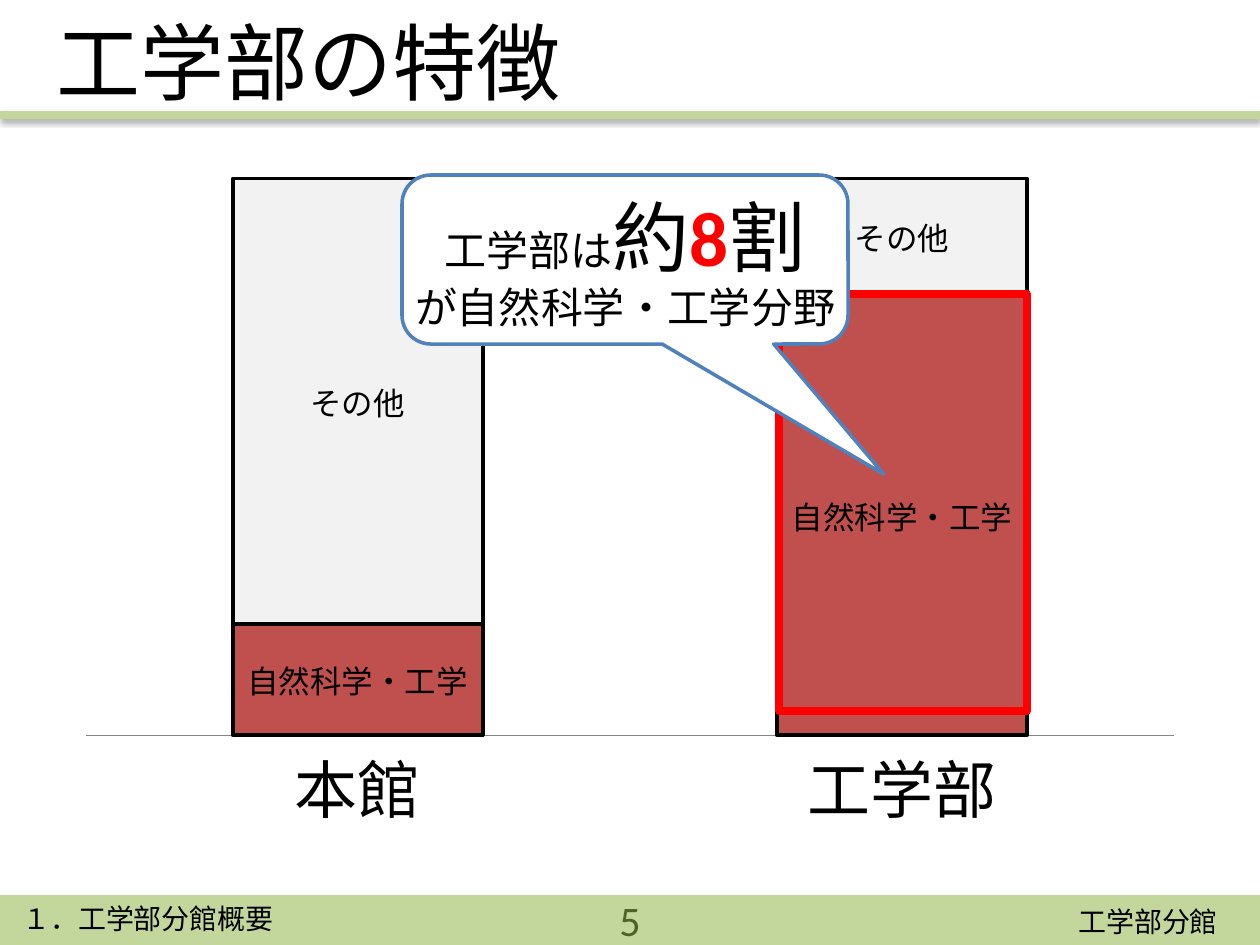
from lxml import etree
from pptx import Presentation
from pptx.chart.data import CategoryChartData
from pptx.dml.color import RGBColor
from pptx.enum.chart import XL_CHART_TYPE, XL_LABEL_POSITION, XL_TICK_LABEL_POSITION, XL_TICK_MARK
from pptx.enum.shapes import MSO_CONNECTOR, MSO_SHAPE
from pptx.enum.text import MSO_ANCHOR, PP_ALIGN
from pptx.oxml import parse_xml
from pptx.oxml.ns import nsdecls, qn
from pptx.util import Emu, Pt

STACKED = XL_CHART_TYPE.COLUMN_STACKED_100
CENTER_LABEL = XL_LABEL_POSITION.CENTER
NO_LABELS = XL_TICK_LABEL_POSITION.NONE
NO_TICKS = XL_TICK_MARK.NONE
STRAIGHT = MSO_CONNECTOR.STRAIGHT
RECT, CALLOUT = MSO_SHAPE.RECTANGLE, MSO_SHAPE.ROUNDED_RECTANGULAR_CALLOUT
TOP, MIDDLE = MSO_ANCHOR.TOP, MSO_ANCHOR.MIDDLE
LEFT, CENTER = PP_ALIGN.LEFT, PP_ALIGN.CENTER

FONT = "Calibri"
BLACK, WHITE, RED = "000000", "FFFFFF", "FF0000"
GREEN, DARK_GREEN, BLUE = "C3D69B", "4F6228", "4F81BD"
BRICK, PALE, GRAY = "C0504D", "F2F2F2", "868686"


def px(n):
    return Emu(round(n * 914400 / 126))


def rgb(color):
    return RGBColor.from_string(color)


def set_line(line, color, width):
    line.color.rgb = rgb(color)
    line.width = Pt(width)


def set_font(font, size, color=BLACK, bold=False):
    font.name = FONT
    font.size = Pt(size)
    font.color.rgb = rgb(color)
    font.bold = bold


def add_rule(s, y, width):
    """Full-width green line with a soft shadow below it."""
    rule = s.shapes.add_connector(STRAIGHT, 0, px(y), px(1260), px(y))
    set_line(rule.line, GREEN, width)
    rule._element.spPr.append(parse_xml(
        f'<a:effectLst {nsdecls("a")}><a:outerShdw blurRad="39370" dist="22860" dir="5400000">'
        '<a:srgbClr val="000000"><a:alpha val="35000"/></a:srgbClr>'
        '</a:outerShdw></a:effectLst>'))


def add_text(s, box, text, size, color=BLACK, align=LEFT, anchor=TOP, wrap=True):
    tf = s.shapes.add_textbox(*map(px, box)).text_frame
    tf.word_wrap = wrap
    tf.vertical_anchor = anchor
    tf.text = text
    p = tf.paragraphs[0]
    p.alignment = align
    set_font(p.runs[0].font, size, color)


def add_box(s, kind, box, color, width, fill=None):
    sp = s.shapes.add_shape(kind, *map(px, box))
    sp.shadow.inherit = False
    if fill:
        sp.fill.solid()
        sp.fill.fore_color.rgb = rgb(fill)
    else:
        sp.fill.background()
    set_line(sp.line, color, width)
    return sp


def add_callout(s, box, lines):
    sp = add_box(s, CALLOUT, box, BLUE, 2, WHITE)
    for i, value in enumerate((0.58, 1.27, 0.17)):
        sp.adjustments[i] = value
    tf = sp.text_frame
    tf.word_wrap = True
    tf.margin_left = tf.margin_right = 0
    tf.vertical_anchor = TOP
    for i, runs in enumerate(lines):
        p = tf.add_paragraph() if i else tf.paragraphs[0]
        p.alignment = CENTER
        for text, *style in runs:
            r = p.add_run()
            r.text = text
            set_font(r.font, *style)


def set_plot_layout(chart, **fractions):
    """Fix the inner plot area as fractions of the chart."""
    plot_area = chart._chartSpace.chart.plotArea
    for old in plot_area.findall(qn("c:layout")):
        plot_area.remove(old)
    layout = etree.Element(qn("c:layout"))
    manual = etree.SubElement(layout, qn("c:manualLayout"))
    settings = dict(layoutTarget="inner", xMode="edge", yMode="edge", **fractions)
    for tag, value in settings.items():
        etree.SubElement(manual, qn(f"c:{tag}")).set("val", str(value))
    plot_area.insert(0, layout)


def add_share_chart(s, box):
    data = CategoryChartData()
    data.categories = ["本館", "工学部"]
    data.add_series("自然科学・工学", (20, 79))
    data.add_series("その他", (80, 21))
    chart = s.shapes.add_chart(STACKED, *map(px, box), data).chart
    set_font(chart.font, 18)
    chart.has_legend = chart.has_title = False
    set_plot_layout(chart, x=0.02, y=0.02, w=0.96, h=0.82)

    value_axis, category_axis = chart.value_axis, chart.category_axis
    value_axis.has_major_gridlines = False
    value_axis.tick_label_position = NO_LABELS
    value_axis.visible = False
    category_axis.major_tick_mark = NO_TICKS
    set_line(category_axis.format.line, GRAY, 0.75)
    set_font(category_axis.tick_labels.font, 36)

    plot = chart.plots[0]
    plot.gap_width, plot.overlap = 118, 100
    plot.vary_by_categories = False
    for series, color in zip(plot.series, (BRICK, PALE)):
        series.format.fill.solid()
        series.format.fill.fore_color.rgb = rgb(color)
        set_line(series.format.line, BLACK, 2.25)
        labels = series.data_labels
        labels.show_series_name = True
        labels.show_value = False
        labels.position = CENTER_LABEL
        set_font(labels.font, 18)


def main():
    prs = Presentation()
    prs.slide_width, prs.slide_height = px(1260), px(945)
    s = prs.slides.add_slide(prs.slide_layouts[6])

    add_rule(s, 920, 28)
    add_rule(s, 115, 4.5)
    add_text(s, (1066, 898, 169, 47), "工学部分館", 16, wrap=False)
    add_text(s, (44, 6, 684, 110), "工学部の特徴", 48, anchor=MIDDLE)
    add_share_chart(s, (63, 165, 1134, 679))
    add_text(s, (483, 895, 294, 50), "5", 24, DARK_GREEN, CENTER, MIDDLE)
    add_text(s, (10, 895, 302, 47), "１．工学部分館概要", 16, wrap=False)
    add_box(s, RECT, (779, 294, 248, 417), RED, 4.5)
    add_callout(s, (402, 175, 446, 169), [
        [("工学部は", 24), ("約", 44), ("8", 44, RED, True), ("割", 44)],
        [("が自然科学・工学分野", 24)],
    ])
    prs.save("out.pptx")


if __name__ == "__main__":
    main()
